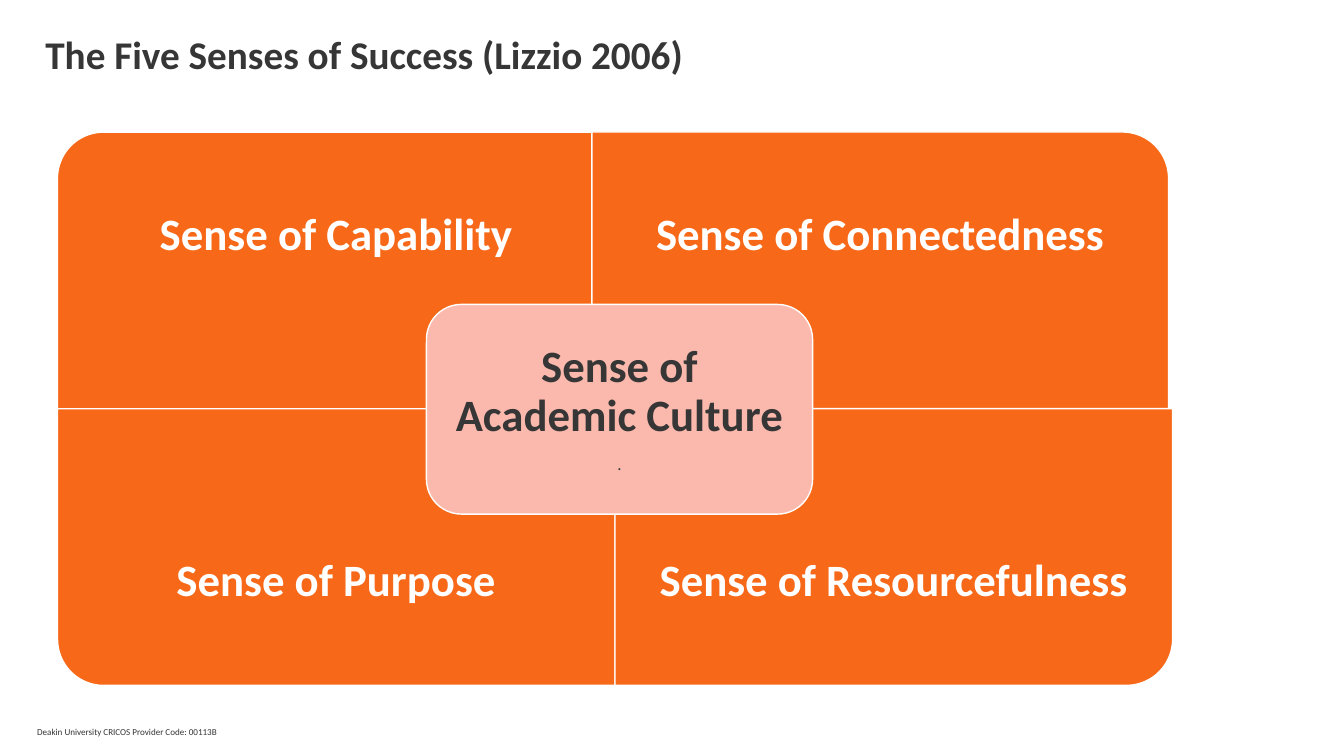
from pptx import Presentation
from pptx.dml.color import RGBColor
from pptx.enum.shapes import MSO_SHAPE
from pptx.enum.text import MSO_ANCHOR, MSO_AUTO_SIZE, PP_ALIGN
from pptx.util import Inches, Pt

ORANGE = RGBColor(0xF7, 0x69, 0x19)
PINK = RGBColor(0xFA, 0xB9, 0xAC)
WHITE = RGBColor(0xFF, 0xFF, 0xFF)
DARK = RGBColor(0x37, 0x36, 0x36)

# Diagram grid in inches: two columns by two rows
GRID_LEFT, GRID_TOP = 0.57, 1.31
COLUMN, ROW = 5.53, 2.745
LABEL_HEIGHT = 0.75 * ROW

# Label, column, row, rotation of the rounded corner, leftward and rightward stretch
QUADRANTS = [
    ("Sense of Capability", 0, 0, 270, 0, 0),
    ("Sense of Connectedness", 1, 0, 0, 0.23, -0.04),
    ("Sense of Purpose", 0, 1, 180, 0, 0),
    ("Sense of Resourcefulness", 1, 1, 90, 0, 0),
]
CENTRE_BOX = (4.23, 3.02, 3.83, 2.08)
CENTRE_PADDING = 0.1

HEADING = {"size": Pt(32), "bold": True}
CENTRED = {"alignment": PP_ALIGN.CENTER, "line_spacing": 0.9}


def apply_format(target, values):
    for name, value in values.items():
        setattr(target, name, value)


def format_paragraph(paragraph, text, color, font, layout):
    paragraph.text = text
    apply_format(paragraph, layout)
    apply_format(paragraph.font, {"name": "Calibri", **font})
    paragraph.font.color.rgb = color


def add_block(slide, kind, box, fill, rotation=0):
    """Draw a filled block that covers box after it has been rotated."""
    left, top, width, height = box
    if rotation % 180:
        left, top = left + (width - height) / 2, top + (height - width) / 2
        width, height = height, width
    shape = slide.shapes.add_shape(kind, *map(Inches, (left, top, width, height)))
    shape.rotation = rotation
    shape.shadow.inherit = False
    shape.fill.solid()
    shape.fill.fore_color.rgb = fill
    shape.line.color.rgb = WHITE
    shape.line.width = Pt(1)


def add_text(slide, box, lines, color, layout, inset=None):
    """Add a text box; lines holds pairs of text and font values."""
    frame = slide.shapes.add_textbox(*map(Inches, box)).text_frame
    apply_format(frame, {"word_wrap": True, "vertical_anchor": MSO_ANCHOR.MIDDLE})
    if inset is not None:
        sides = ("left", "top", "right", "bottom")
        apply_format(frame, {f"margin_{side}": Inches(inset) for side in sides})
    for index, (text, font) in enumerate(lines):
        paragraph = frame.add_paragraph() if index else frame.paragraphs[0]
        format_paragraph(paragraph, text, color, font, layout)


def add_title(slide, box, text):
    title = slide.shapes.title
    apply_format(title, dict(zip(("left", "top", "width", "height"), map(Inches, box))))
    apply_format(title.text_frame, {
        "vertical_anchor": MSO_ANCHOR.TOP,
        "auto_size": MSO_AUTO_SIZE.NONE,
        "word_wrap": True,
    })
    format_paragraph(title.text_frame.paragraphs[0], text, DARK,
                     {"size": Pt(28), "bold": True},
                     {"alignment": PP_ALIGN.LEFT, "line_spacing": 0.9})


def add_quadrant(slide, label, column, row, rotation, stretch_left, stretch_right):
    left = GRID_LEFT + column * COLUMN - stretch_left
    top = GRID_TOP + row * ROW
    width = COLUMN + stretch_left + stretch_right
    add_block(slide, MSO_SHAPE.ROUND_1_RECTANGLE, (left, top, width, ROW), ORANGE, rotation)
    # Labels keep to the outer edge, away from the centre
    label_top = top + row * (ROW - LABEL_HEIGHT)
    add_text(slide, (left, label_top, width, LABEL_HEIGHT), [(label, HEADING)],
             WHITE, CENTRED, 0.25)


def add_centre(slide):
    add_block(slide, MSO_SHAPE.ROUNDED_RECTANGLE, CENTRE_BOX, PINK)
    left, top, width, height = CENTRE_BOX
    inner = (left + CENTRE_PADDING, top + CENTRE_PADDING,
             width - 2 * CENTRE_PADDING, height - 2 * CENTRE_PADDING)
    lines = [("Sense of Academic Culture", HEADING), (".", {"size": Pt(12), "bold": False})]
    add_text(slide, inner, lines, DARK, {**CENTRED, "space_after": Pt(11)}, 0.13)


def main():
    presentation = Presentation()
    presentation.slide_width, presentation.slide_height = Inches(13.33), Inches(7.5)
    slide = presentation.slides.add_slide(presentation.slide_layouts[5])

    add_title(slide, (0.35, 0.3, 9.24, 0.86), "The Five Senses of Success (Lizzio 2006)")

    # Four senses around the central one
    for quadrant in QUADRANTS:
        add_quadrant(slide, *quadrant)
    add_centre(slide)

    # Footer
    add_text(slide, (0.27, 7.15, 7.24, 0.22),
             [("Deakin University CRICOS Provider Code: 00113B", {"size": Pt(6.5)})], DARK, {})

    presentation.save("out.pptx")


if __name__ == "__main__":
    main()
